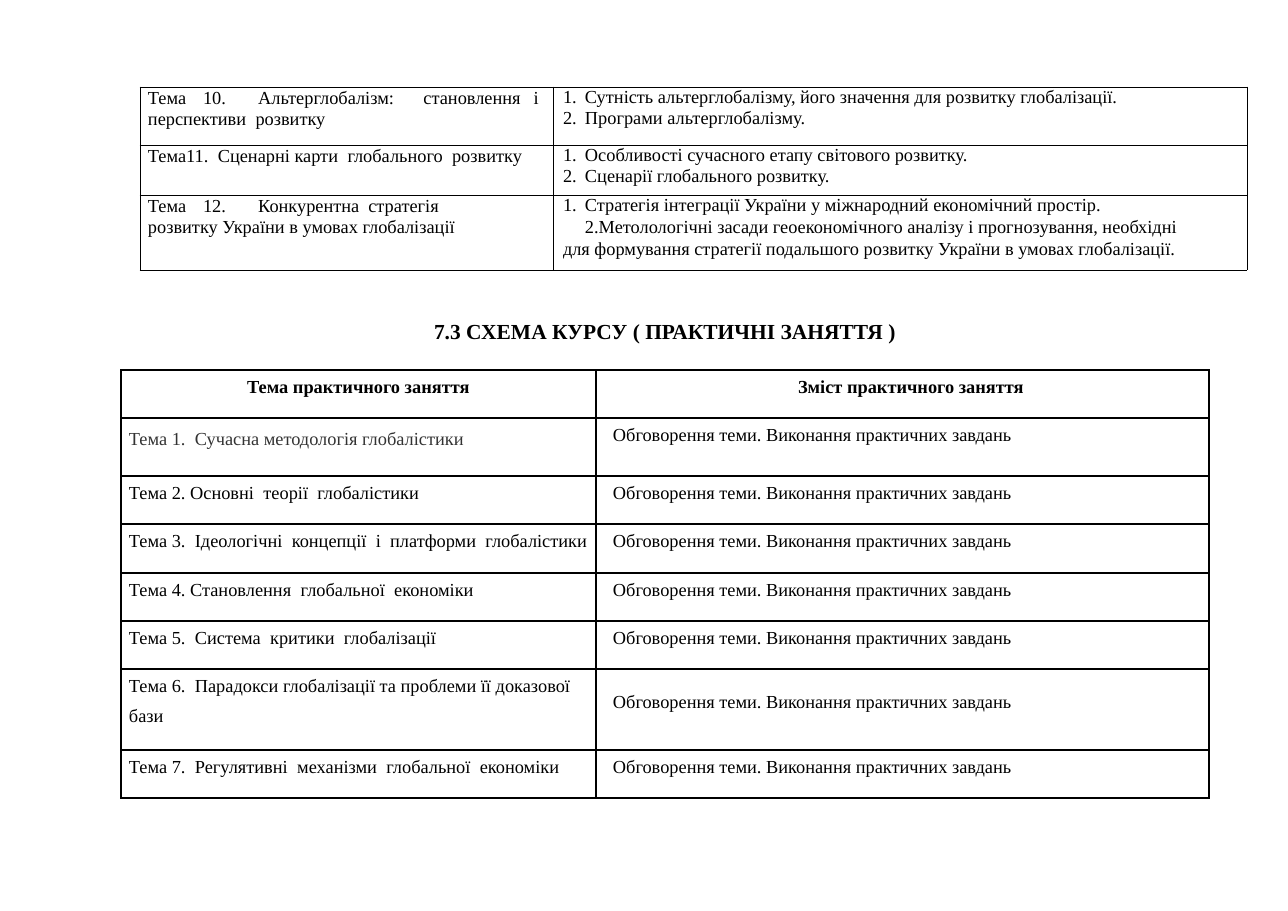
from lxml.etree import SubElement
from pptx import Presentation
from pptx.dml.color import RGBColor as RGB
from pptx.enum.text import PP_ALIGN as AL
from pptx.oxml import parse_xml
from pptx.oxml.ns import nsdecls, qn
from pptx.util import Pt

PX = 8298
FONT = "Times New Roman"
COLORS = {"ink": "000000", "gray": "333333", "paper": "FFFFFF"}
WIDE_GAP = "|"

LECTURES = [
    ("Тема\t10.\tАльтерглобалізм:\tстановлення\tі перспективи|розвитку",
     [63, 117, 271, 389],
     ["Сутність альтерглобалізму, його значення для розвитку глобалізації.",
      "Програми альтерглобалізму."]),
    ("Тема11.|Сценарні карти|глобального|розвитку", [],
     ["Особливості сучасного етапу світового розвитку.",
      "Сценарії глобального розвитку."]),
    ("Тема\t12.\tКонкурентна\tстратегія\vрозвитку України в умовах глобалізації",
     [53, 116, 231],
     ["Стратегія інтеграції України у міжнародний економічний простір.",
      "Метолологічні засади геоекономічного аналізу і прогнозування, необхідні "
      "для формування стратегії подальшого розвитку України в умовах глобалізації."]),
]
PRACTICE_HEADS = ["Тема практичного заняття", "Зміст практичного заняття"]
PRACTICE_TOPICS = [
    ["Тема 1.|Сучасна методологія глобалістики"],
    ["Тема 2. Основні|теорії|глобалістики"],
    ["Тема 3.|Ідеологічні|концепції|і|платформи|глобалістики"],
    ["Тема 4. Становлення|глобальної|економіки"],
    ["Тема 5.|Система|критики|глобалізації"],
    ["Тема 6.|Парадокси глобалізації та проблеми її доказової", "бази"],
    ["Тема 7.|Регулятивні|механізми|глобальної|економіки"],
]
PRACTICE_CONTENT = "Обговорення теми. Виконання практичних завдань"


def add_run(p, text, size, bold, color):
    r = p.add_run()
    r.text = text
    r.font.name, r.font.size, r.font.bold = FONT, Pt(size), bold
    r.font.color.rgb = RGB.from_string(COLORS[color])
    return r


def add_text(tf, text, first=True, size=12, bold=False, color="ink", align=AL.LEFT,
             left=0, indent=0, line=None, before=0, numbered=False, tabs=()):
    p = tf.paragraphs[0] if first else tf.add_paragraph()
    pPr = p._p.get_or_add_pPr()
    pPr.set("marL", str(left * PX))
    pPr.set("indent", str(indent * PX))
    if numbered:
        SubElement(pPr, qn("a:buFont")).set("typeface", FONT)
        SubElement(pPr, qn("a:buAutoNum")).set("type", "arabicPeriod")
    if tabs:
        stops = SubElement(pPr, qn("a:tabLst"))
        for pos in tabs:
            stop = SubElement(stops, qn("a:tab"))
            stop.set("pos", str(pos * PX))
            stop.set("algn", "l")
    p.alignment = align
    if line:
        p.line_spacing = Pt(line)
    if before:
        p.space_before = Pt(before)
    for i, row in enumerate(text.split("\v")):
        if i:
            p.add_line_break()
        for j, part in enumerate(row.split(WIDE_GAP)):
            if j:
                gap = add_run(p, " ", size, bold, color)
                gap._r.get_or_add_rPr().set("spc", "300")
            add_run(p, part, size, bold, color)


def add_grid(s, x, y, cols, rows, border):
    frame = s.shapes.add_table(len(rows), len(cols), x * PX, y * PX,
                               sum(cols) * PX, sum(rows) * PX)
    table = frame.table
    table.first_row = table.horz_banding = False
    for col, w in zip(table.columns, cols):
        col.width = w * PX
    for row, h in zip(table.rows, rows):
        row.height = h * PX
    for cell in table.iter_cells():
        cell.margin_left = cell.margin_right = cell.margin_top = cell.margin_bottom = 0
        cell.fill.solid()
        cell.fill.fore_color.rgb = RGB.from_string(COLORS["paper"])
        tcPr = cell._tc.get_or_add_tcPr()
        for i, side in enumerate("LRTB"):
            tcPr.insert(i, parse_xml(
                f'<a:ln{side} {nsdecls("a")} w="{Pt(border)}"><a:solidFill>'
                f'<a:srgbClr val="{COLORS["ink"]}"/></a:solidFill></a:ln{side}>'))
    return table


def add_lectures(s, x, y):
    table = add_grid(s, x, y, [413, 694], [58, 50, 75], 0.5)
    for i, (topic, tabs, points) in enumerate(LECTURES):
        add_text(table.cell(i, 0).text_frame, topic, left=8, line=13.8, tabs=tabs)
        content = table.cell(i, 1)
        content.margin_right = 55 * PX
        for j, point in enumerate(points):
            hanging = i < 2 or j == 0
            add_text(content.text_frame, point, first=j == 0, numbered=True, tabs=[32],
                     left=32 if hanging else 10, indent=-22 if hanging else 22,
                     line=14 if j else 13.2, before=0 if hanging else 0.7)


def add_title(s, x, y, w, h):
    tf = s.shapes.add_textbox(x * PX, y * PX, w * PX, h * PX).text_frame
    tf.word_wrap = True
    tf.margin_left = tf.margin_right = tf.margin_bottom = 0
    tf.margin_top = PX
    add_text(tf, "7.3 СХЕМА КУРСУ ( ПРАКТИЧНІ ЗАНЯТТЯ )", size=14, bold=True, left=1)


def add_practice(s, x, y):
    table = add_grid(s, x, y, [475, 613], [48, 58, 48, 49, 48, 48, 81, 48], 1)
    for cell in table.iter_cells():
        cell.margin_top = 7 * PX
    for j, head in enumerate(PRACTICE_HEADS):
        add_text(table.cell(0, j).text_frame, head, bold=True, align=AL.CENTER, left=17 * j)
    for i, lines in enumerate(PRACTICE_TOPICS, 1):
        topic, content = table.cell(i, 0), table.cell(i, 1)
        if i == 1:
            topic.margin_top = 11 * PX
        if len(lines) > 1:
            content.margin_top = 23 * PX
        for j, text in enumerate(lines):
            add_text(topic.text_frame, text, first=j == 0, left=8,
                     color="gray" if i == 1 else "ink", before=6.3 * j)
        add_text(content.text_frame, PRACTICE_CONTENT, left=17)


def main():
    prs = Presentation()
    prs.slide_width, prs.slide_height = 1288 * PX, 911 * PX
    s = prs.slides.add_slide(prs.slide_layouts[6])
    add_lectures(s, 140, 87)
    add_title(s, 433, 317, 468, 29)
    add_practice(s, 121, 370)
    prs.save("out.pptx")


if __name__ == "__main__":
    main()
